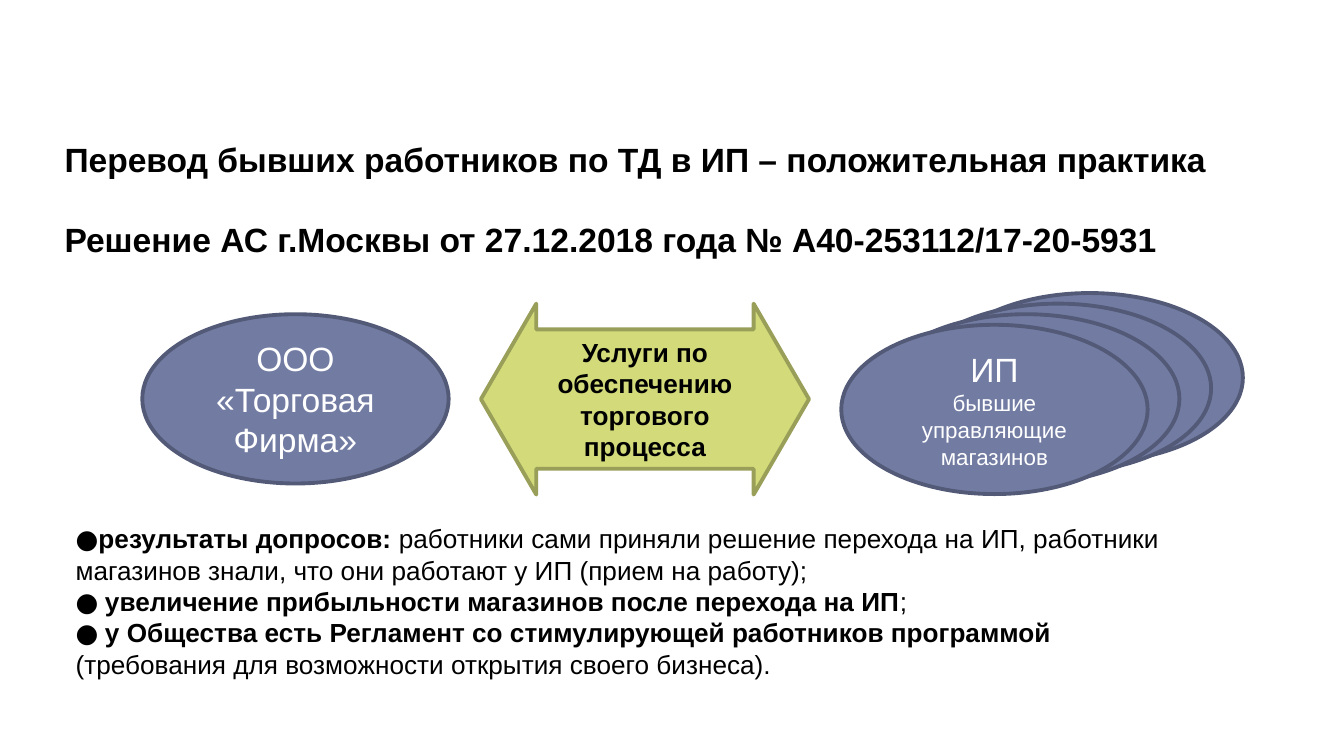
from pptx import Presentation
from pptx.dml.color import RGBColor
from pptx.enum.shapes import MSO_SHAPE
from pptx.enum.text import MSO_ANCHOR, PP_ALIGN
from pptx.util import Cm, Pt

OVAL, ARROW = MSO_SHAPE.OVAL, MSO_SHAPE.LEFT_RIGHT_ARROW
MIDDLE, TOP = MSO_ANCHOR.MIDDLE, MSO_ANCHOR.TOP
CENTER = PP_ALIGN.CENTER
COLORS = {
    "blue": "727CA3", "blue_line": "535A77",
    "green": "D2DA7A", "green_line": "999F59",
    "white": "FFFFFF", "black": "000000",
}
INSET = 0.13


def fill_text(sp, paragraphs, color, anchor, align=None, side=INSET):
    """Write paragraphs, each a list of (text, size, bold, font) runs."""
    tf = sp.text_frame
    tf.word_wrap = True
    tf.vertical_anchor = anchor
    tf.margin_left = tf.margin_right = Cm(side)
    tf.margin_top = tf.margin_bottom = Cm(INSET)
    for i, runs in enumerate(paragraphs):
        p = tf.add_paragraph() if i else tf.paragraphs[0]
        p.alignment = align
        for text, size, bold, font in runs:
            r = p.add_run()
            r.text = text
            r.font.size = Pt(size)
            r.font.bold = bold
            r.font.name = font
            r.font.color.rgb = RGBColor.from_string(COLORS[color])


def add_figure(kind, x, y, w, h, color):
    sp = s.shapes.add_shape(kind, Cm(x), Cm(y), Cm(w), Cm(h))
    sp.shadow.inherit = False
    sp.fill.solid()
    sp.fill.fore_color.rgb = RGBColor.from_string(COLORS[color])
    sp.line.color.rgb = RGBColor.from_string(COLORS[color + "_line"])
    sp.line.width = Pt(2.08)
    return sp


prs = Presentation()
prs.slide_width, prs.slide_height = Cm(25.4), Cm(14.29)
s = prs.slides.add_slide(prs.slide_layouts[6])

# Company
oval_w, oval_h = 5.79, 3.2
company = add_figure(OVAL, 2.69, 5.94, oval_w, oval_h, "blue")
fill_text(company, [[("ООО «Торговая Фирма»", 18, False, "Arial")]],
          "white", MIDDLE, CENTER)

# Stack of entrepreneurs, the front one carries the label
for i in range(4):
    entrepreneur = add_figure(OVAL, 17.7 - 0.6 * i, 5.54 + 0.2 * i,
                              oval_w, oval_h, "blue")
fill_text(entrepreneur, [
    [("ИП", 18, False, "Arial")],
    [("бывшие управляющие магазинов", 12, False, "Arial")],
], "white", MIDDLE, CENTER)

# Services between them
services = add_figure(ARROW, 9.09, 5.74, 6.2, 3.61, "green")
services.adjustments[0] = 0.73
services.adjustments[1] = 0.29
fill_text(services,
          [[("Услуги по обеспечению торгового процесса", 14, True, "Arial")]],
          "black", MIDDLE, CENTER, side=0.6)

# Title
title = s.shapes.add_textbox(Cm(1.09), Cm(2.49), Cm(23.01), Cm(2.57))
fill_text(title, [
    [("Перевод бывших работников по ТД в ИП – положительная практика",
      18, True, "Arial")],
    [("Решение АС г.Москвы от 27.12.2018 года № А40-253112/17-20-5931",
      18, True, "Arial")],
], "black", TOP)
title.text_frame.paragraphs[1].space_before = Pt(21.6)

# Arguments: marker, bold lead, plain rest
arguments = [
    ("●", "результаты допросов: ",
     "работники сами приняли решение перехода на ИП, работники магазинов "
     "знали, что они работают у ИП (прием на работу);"),
    ("● ", "увеличение прибыльности магазинов после перехода на ИП", ";"),
    ("● ", "у Общества есть Регламент со стимулирующей работников программой ",
     "(требования для возможности открытия своего бизнеса)."),
]
box = s.shapes.add_textbox(Cm(1.3), Cm(9.75), Cm(20.8), Cm(3.25))
fill_text(box, [
    [(marker, 14, True, "Roboto"), (lead, 14, True, "Arial"),
     (rest, 14, False, "Arial")]
    for marker, lead, rest in arguments
], "black", TOP)

prs.save("out.pptx")
